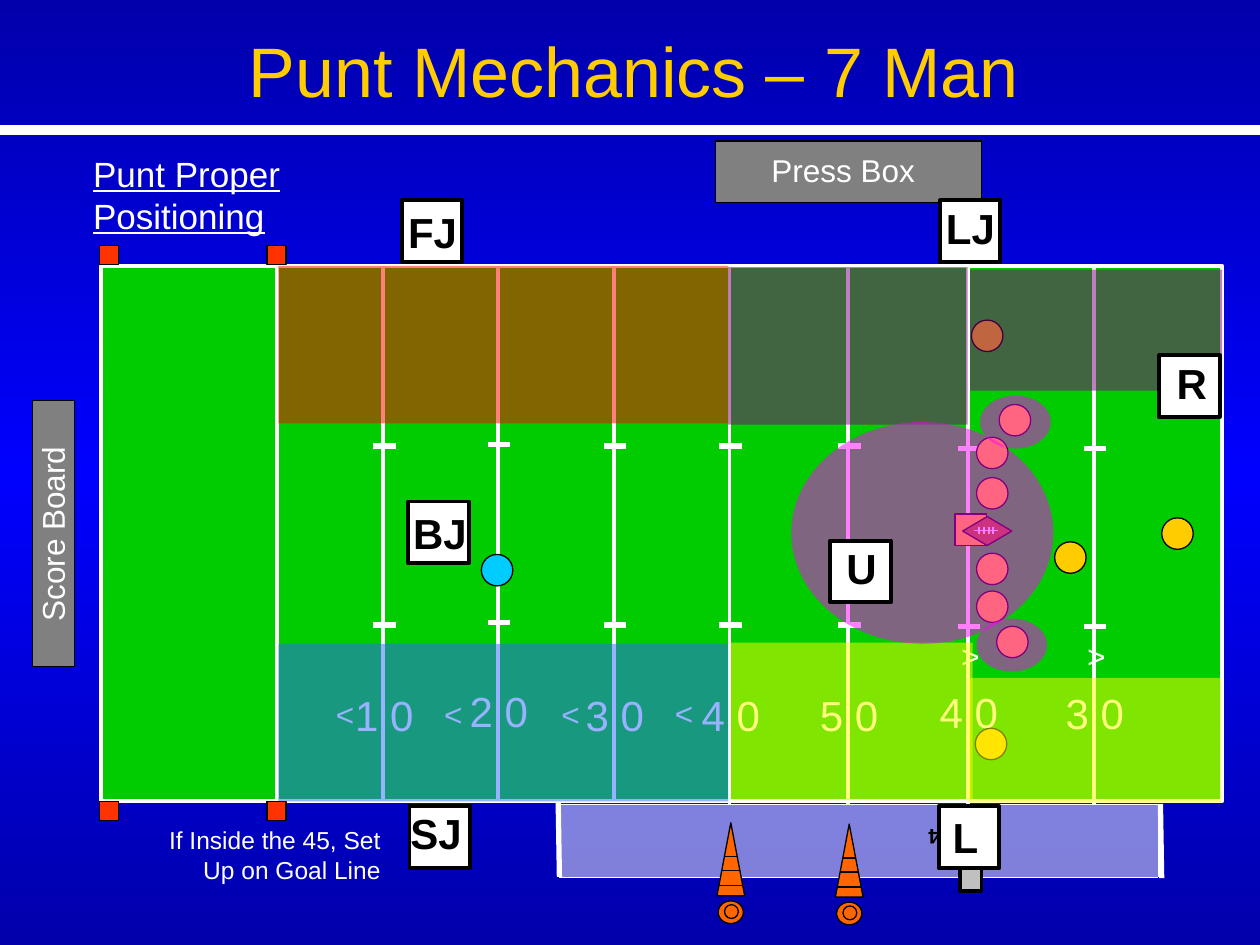
import copy
import pptx
import pptx.dml.color
import pptx.enum.dml
import pptx.enum.shapes
import pptx.enum.text
import pptx.oxml.ns
import pptx.util

Inches, Pt = pptx.util.Inches, pptx.util.Pt
SHAPE = pptx.enum.shapes.MSO_SHAPE
ALIGN = pptx.enum.text.PP_ALIGN
RECT, OVAL = SHAPE.RECTANGLE, SHAPE.OVAL
WHITE, BLACK, GRAY = "FFFFFF", "000000", "808080"
GOLD, ORANGE, RED = "FFCC00", "FF6600", "FF3300"

# Content: x, label, line top, label top, upper and lower hash marks
YARD_LINES = [
    (3.04, "1 0", 2.11, 5.42, 3.54, 4.96),
    (3.95, "2 0", 2.11, 5.39, 3.53, 4.94),
    (4.87, "3 0", 2.11, 5.42, 3.54, 4.96),
    (5.79, "4 0", 2.13, 5.42, 3.54, 4.96),
    (6.73, "5 0", 2.13, 5.42, 3.54, 4.96),
    (7.68, "4 0", 2.13, 5.40, 3.56, 4.97),
    (8.68, "3 0", 2.13, 5.41, 3.56, 4.97),
]
# Direction arrows: left, top, rotation
ARROWS = [(2.56, 5.47, 0), (3.42, 5.47, 0), (4.35, 5.47, 0), (5.25, 5.46, 0),
          (7.53, 5.04, 180), (8.53, 5.04, 180)]
PYLONS = [(x, y) for x in (2.12, 0.79) for y in (1.95, 6.36)]
CONES = [(6.74, 6.54), (5.8, 6.53)]
KICKERS = [(7.75, 3.79), (7.75, 3.47), (7.75, 4.39), (7.75, 4.69), (9.22, 4.11),
           (7.74, 5.78), (7.91, 4.97), (7.71, 2.54), (7.93, 3.21), (8.37, 4.3)]
# Coverage zones: shape, left, top, width, height, colour
ZONES = [
    (RECT, 5.8, 5.1, 1.92, 1.25, "FFFF00"),
    (RECT, 7.69, 5.38, 2, 0.99, "FFFF00"),
    (RECT, 2.21, 5.11, 3.57, 1.25, "3366FF"),
    (RECT, 2.21, 2.11, 3.57, 1.25, "FF0000"),
    (RECT, 5.78, 2.12, 1.9, 1.25, "800080"),
    (RECT, 7.7, 2.14, 2, 0.96, "800080"),
    (OVAL, 6.28, 3.35, 2.08, 1.76, "FF00FF"),
    (OVAL, 7.78, 3.14, 0.56, 0.42, "FF00FF"),
    (OVAL, 7.75, 4.91, 0.56, 0.42, "FF00FF"),
]
# Officials: label, box left and top, text left, top and width
OFFICIALS = [
    ("BJ", 3.24, 3.98, 3.18, 3.98, 0.66),
    ("FJ", 3.19, 1.59, 3.14, 1.59, 0.67),
    ("SJ", 3.25, 6.4, 3.16, 6.36, 0.67),
    ("LJ", 7.46, 1.59, 7.41, 1.56, 0.76),
    (" L", 7.45, 6.4, 7.37, 6.39, 0.67),
    ("R", 9.2, 2.82, 9.24, 2.79, 0.34),
    ("U", 6.59, 4.29, 6.62, 4.26, 0.34),
]

prs = pptx.Presentation()
prs.slide_width, prs.slide_height = Inches(10), Inches(7.5)
s = prs.slides.add_slide(prs.slide_layouts[6])


def rgb(color):
    return pptx.dml.color.RGBColor.from_string(color)


def add_child(parent, tag, **attrs):
    child = parent.makeelement(pptx.oxml.ns.qn(tag), attrs)
    parent.append(child)
    return child


def box(kind, x, y, w, h, fill=None, line=BLACK, width=0.75, alpha=None):
    sp = s.shapes.add_shape(kind, Inches(x), Inches(y), Inches(w), Inches(h))
    sp.shadow.inherit = False
    if fill:
        sp.fill.solid()
        sp.fill.fore_color.rgb = rgb(fill)
        if alpha:
            clr = next(sp.element.iter(pptx.oxml.ns.qn("a:srgbClr")))
            add_child(clr, "a:alpha", val=str(alpha * 1000))
    else:
        sp.fill.background()
    if line:
        sp.line.color.rgb = rgb(line)
        sp.line.width = Pt(width)
    else:
        sp.line.fill.background()
    return sp


def line(x1, y1, x2, y2, width, color=WHITE):
    c = s.shapes.add_connector(pptx.enum.shapes.MSO_CONNECTOR.STRAIGHT,
                               Inches(x1), Inches(y1), Inches(x2), Inches(y2))
    c.line.color.rgb = rgb(color)
    c.line.width = Pt(width)
    add_child(c.element.spPr, "a:effectLst")


def text(words, x, y, w, h, size, color=WHITE, align=ALIGN.RIGHT, bold=False,
         wrap=True, rotation=0):
    sp = s.shapes.add_textbox(Inches(x), Inches(y), Inches(w), Inches(h))
    sp.rotation = rotation
    tf = sp.text_frame
    tf.word_wrap = wrap
    p = tf.paragraphs[0]
    p.text = words
    p.alignment = align
    p.font.name, p.font.size, p.font.bold = "Arial", Pt(size), bold
    p.font.color.rgb = rgb(color)
    return sp


# Background
bg = s.background.fill
bg.gradient()
bg.gradient_angle = 90
stops = next(s.element.iter(pptx.oxml.ns.qn("a:gsLst")))
stops.append(copy.deepcopy(stops[-1]))
for stop, position, color in zip(bg.gradient_stops, (0, 0.5, 1),
                                 ("0000AA", "0000FF", "0000AA")):
    stop.position = position
    stop.color.rgb = rgb(color)

# Titles and signs
line(0, 1.03, 10, 1.03, 6)
text("Punt Mechanics – 7 Man", 0.26, 0.17, 9.54, 0.77, 40, GOLD, ALIGN.CENTER)
heading = text("Punt Proper Positioning", 0.64, 1.16, 3.12, 1.27, 20, align=ALIGN.LEFT)
heading.text_frame.margin_right = Inches(0.5)
heading.text_frame.paragraphs[0].font.underline = True
box(RECT, 6.49, 0.31, 0.49, 2.11, GRAY).rotation = 270
text("Press Box", 6.02, 1.15, 1.34, 0.4, 18, wrap=False)
box(RECT, 0.26, 3.18, 0.33, 2.11, GRAY)
text("Score Board", -0.38, 4.04, 1.59, 0.4, 18, rotation=270)
text("If Inside the 45, Set Up on Goal Line", 1.2, 6.5, 1.92, 0.57, 14)

# Field, goal line and pylons
box(RECT, 0.8, 2.11, 8.9, 4.25, "00CC00", WHITE, 2.25)
line(2.2, 2.11, 2.2, 6.36, 2.25)
for x, y in PYLONS:
    box(RECT, x, y, 0.15, 0.15, RED)

# Yard lines with hash marks and numbers
for x, label, top, label_top, *hashes in YARD_LINES:
    line(x, top, x, top + 4.25, 2.25)
    for y in hashes:
        line(x - 0.08, y, x + 0.1, y, 3)
    text(label, x - 0.42, label_top, 0.76, 0.5, 24)
for x, y, rotation in ARROWS:
    text("<", x, y, 0.35, 0.4, 18, wrap=False, rotation=rotation)

# Team box
bench = box(RECT, 4.44, 6.38, 4.75, 0.58, WHITE, WHITE, 0.25, alpha=50)
bench.line.dash_style = pptx.enum.dml.MSO_LINE.ROUND_DOT
line(4.43, 6.36, 4.44, 6.96, 3)
line(9.21, 6.38, 9.22, 6.97, 3)

# Cones and down marker
for x, y in CONES:
    box(SHAPE.ISOSCELES_TRIANGLE, x - 0.11, y, 0.22, 0.58, ORANGE)
    box(OVAL, x - 0.1, y + 0.62, 0.2, 0.18, ORANGE)
    box(OVAL, x - 0.05, y + 0.65, 0.11, 0.11)
    for drop, half in ((0.27, 0.05), (0.38, 0.07), (0.5, 0.09)):
        line(x - half, y + drop, x + half, y + drop, 0.75, BLACK)
box(RECT, 7.62, 6.86, 0.17, 0.21, "C0C0C0", width=2.25)
text("4", 7.27, 6.5, 0.29, 0.3, 12, BLACK, ALIGN.LEFT, True, False, 180)

# Players and ball
box(RECT, 7.58, 4.08, 0.25, 0.25, GOLD)
for x, y in KICKERS:
    box(OVAL, x, y, 0.25, 0.25, GOLD)
box(OVAL, 3.82, 4.4, 0.25, 0.25, "00CCFF")
box(SHAPE.FLOWCHART_DECISION, 7.64, 4.1, 0.39, 0.23, "996600")
line(7.73, 4.21, 7.92, 4.21, 0.75)
for x in (7.77, 7.81, 7.85, 7.88):
    line(x, 4.18, x, 4.24, 0.75)

# Coverage zones
for *place, color in ZONES:
    box(*place, color, line=None, alpha=50)

# Officials
for label, x, y, text_x, text_y, w in OFFICIALS:
    box(RECT, x, y, 0.48, 0.49, WHITE, width=2.25)
    text(label, text_x, text_y, w, 0.5, 24, BLACK, ALIGN.LEFT, True)

prs.save("out.pptx")
